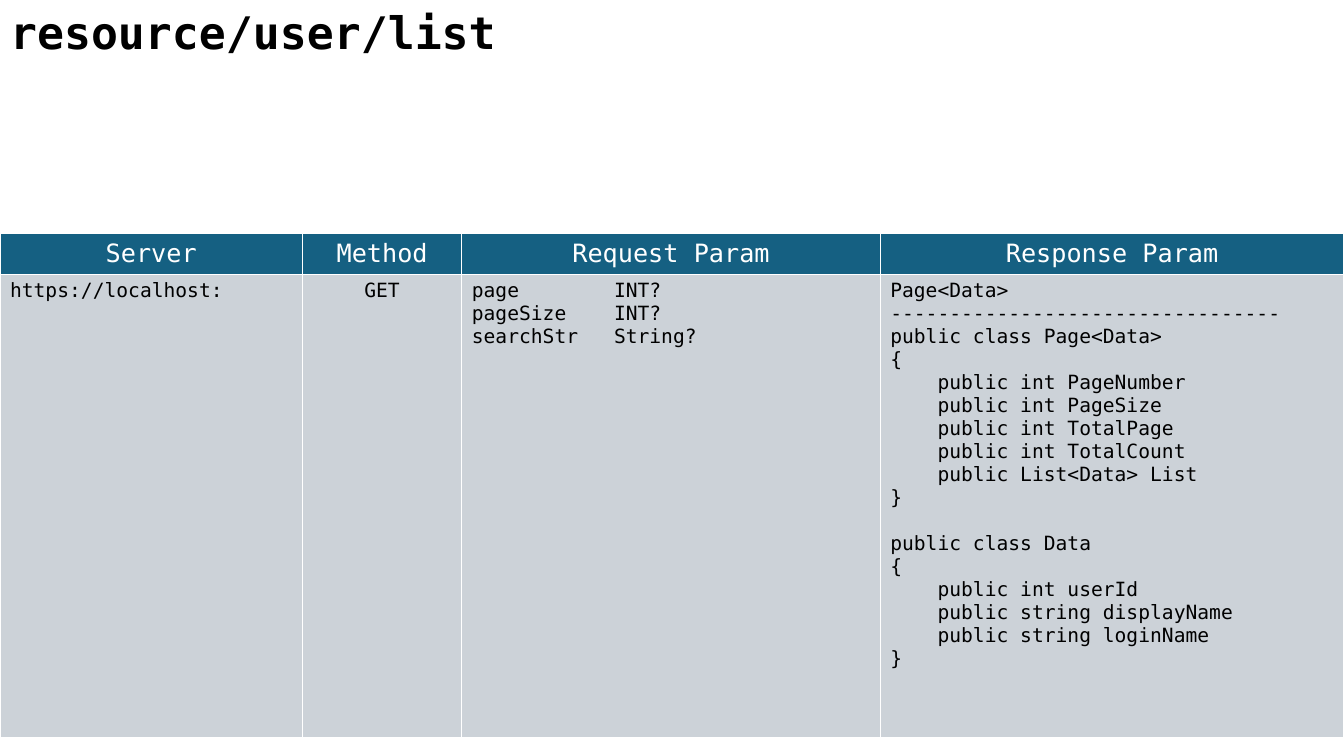
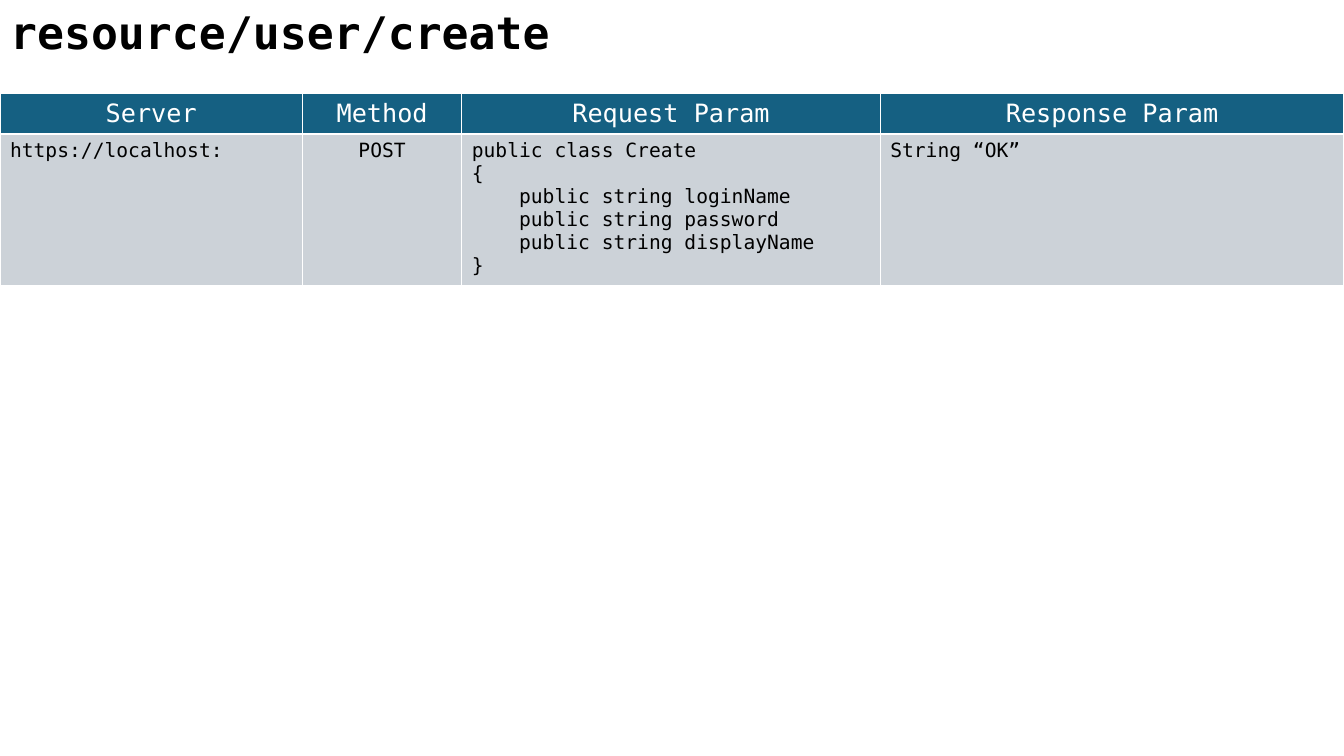
from dataclasses import dataclass

from lxml.etree import SubElement
from pptx import Presentation
from pptx.dml.color import RGBColor
from pptx.enum.text import MSO_ANCHOR, MSO_AUTO_SIZE, PP_ALIGN
from pptx.oxml.ns import qn
from pptx.presentation import Presentation as Deck
from pptx.slide import Slide
from pptx.table import _Cell
from pptx.util import Inches, Pt

FONT = "DejaVu Sans Mono"
BLACK, WHITE = "000000", "FFFFFF"
HEADER_FILL, BODY_FILL = "156082", "CCD2D8"
TITLE_SIZE, HEADER_SIZE, BODY_SIZE = 32, 18, 14
BLOCK_GAP = 16.3
TAB_STOP = 1.41
HEADER_HEIGHT = 0.4


@dataclass(frozen=True)
class Column:
    heading: str
    width: float
    align: PP_ALIGN = PP_ALIGN.LEFT


@dataclass(frozen=True)
class Endpoint:
    """One slide; each cell is a list of text blocks set apart by a gap."""
    title: str
    top: float
    body_height: float
    cells: list[list[str]]


COLUMNS = [
    Column("Server", 3),
    Column("Method", 1.58, PP_ALIGN.CENTER),
    Column("Request Param", 4.15),
    Column("Response Param", 4.6),
]

PAGE_CLASS = """Page<Data>
---------------------------------
public class Page<Data>
{
    public int PageNumber
    public int PageSize
    public int TotalPage
    public int TotalCount
    public List<Data> List
}"""

DATA_CLASS = """public class Data
{
    public int userId
    public string displayName
    public string loginName
}"""

CREATE_CLASS = """public class Create
{
    public string loginName
    public string password
    public string displayName
}"""

SERVER = ["https://localhost:"]

ENDPOINTS = [
    Endpoint("resource/user/list", 2.32, 4.6, [
        SERVER,
        ["GET"],
        ["page\tINT?\npageSize\tINT?\nsearchStr\tString?"],
        [PAGE_CLASS, DATA_CLASS],
    ]),
    Endpoint("resource/user/create", 0.93, 1.5, [
        SERVER,
        ["POST"],
        [CREATE_CLASS],
        ["String “OK”"],
    ]),
]


def rgb(value: str) -> RGBColor:
    return RGBColor.from_string(value)


def style_runs(p, size: float, color: str, bold: bool = False) -> None:
    for r in p.runs:
        r.font.name = FONT
        r.font.size = Pt(size)
        r.font.bold = bold
        r.font.color.rgb = rgb(color)


def add_tab_stop(p, position: float) -> None:
    tabs = SubElement(p._p.get_or_add_pPr(), qn("a:tabLst"))
    SubElement(tabs, qn("a:tab"), pos=str(Inches(position)), algn="l")


def add_borders(cell: _Cell, color: str, width: float = 1) -> None:
    tc_pr = cell._tc.get_or_add_tcPr()
    for side in ("lnL", "lnR", "lnT", "lnB"):
        line = SubElement(tc_pr, qn(f"a:{side}"), w=str(Pt(width)))
        fill = SubElement(line, qn("a:solidFill"))
        SubElement(fill, qn("a:srgbClr"), val=color)


def fill_cell(cell: _Cell, blocks: list[str], size: float, color: str,
              fill: str, align: PP_ALIGN) -> None:
    add_borders(cell, WHITE)
    cell.fill.solid()
    cell.fill.fore_color.rgb = rgb(fill)
    tf = cell.text_frame
    tf.text = "\n".join(blocks)
    block_starts = set()
    line_count = 0
    for block in blocks:
        block_starts.add(line_count)
        line_count += len(block.splitlines())
    for i, p in enumerate(tf.paragraphs):
        p.alignment = align
        if i and i in block_starts:
            p.space_before = Pt(BLOCK_GAP)
        if "\t" in p.text:
            add_tab_stop(p, TAB_STOP)
        style_runs(p, size, color)


def add_title(slide: Slide, text: str) -> None:
    sp = slide.shapes.title
    sp.left, sp.top = Inches(0), Inches(0)
    sp.width, sp.height = Inches(9.45), Inches(0.64)
    tf = sp.text_frame
    tf.text = text
    tf.word_wrap = True
    tf.auto_size = MSO_AUTO_SIZE.NONE
    tf.vertical_anchor = MSO_ANCHOR.TOP
    p = tf.paragraphs[0]
    p.alignment = PP_ALIGN.LEFT
    style_runs(p, TITLE_SIZE, BLACK, bold=True)


def add_endpoint_table(slide: Slide, endpoint: Endpoint) -> None:
    width = sum(column.width for column in COLUMNS)
    height = HEADER_HEIGHT + endpoint.body_height
    table = slide.shapes.add_table(
        2, len(COLUMNS), Inches(0), Inches(endpoint.top),
        Inches(width), Inches(height)).table
    table.horz_banding = False
    table.rows[0].height = Inches(HEADER_HEIGHT)
    table.rows[1].height = Inches(endpoint.body_height)
    for i, (column, blocks) in enumerate(zip(COLUMNS, endpoint.cells)):
        table.columns[i].width = Inches(column.width)
        fill_cell(table.cell(0, i), [column.heading], HEADER_SIZE, WHITE,
                  HEADER_FILL, PP_ALIGN.CENTER)
        fill_cell(table.cell(1, i), blocks, BODY_SIZE, BLACK,
                  BODY_FILL, column.align)


def add_endpoint_slide(prs: Deck, endpoint: Endpoint) -> None:
    slide = prs.slides.add_slide(prs.slide_layouts.get_by_name("Title Only"))
    add_title(slide, endpoint.title)
    add_endpoint_table(slide, endpoint)


def main() -> None:
    prs = Presentation()
    prs.slide_width, prs.slide_height = Inches(13.33), Inches(7.5)
    for endpoint in ENDPOINTS:
        add_endpoint_slide(prs, endpoint)
    prs.save("out.pptx")


if __name__ == "__main__":
    main()
